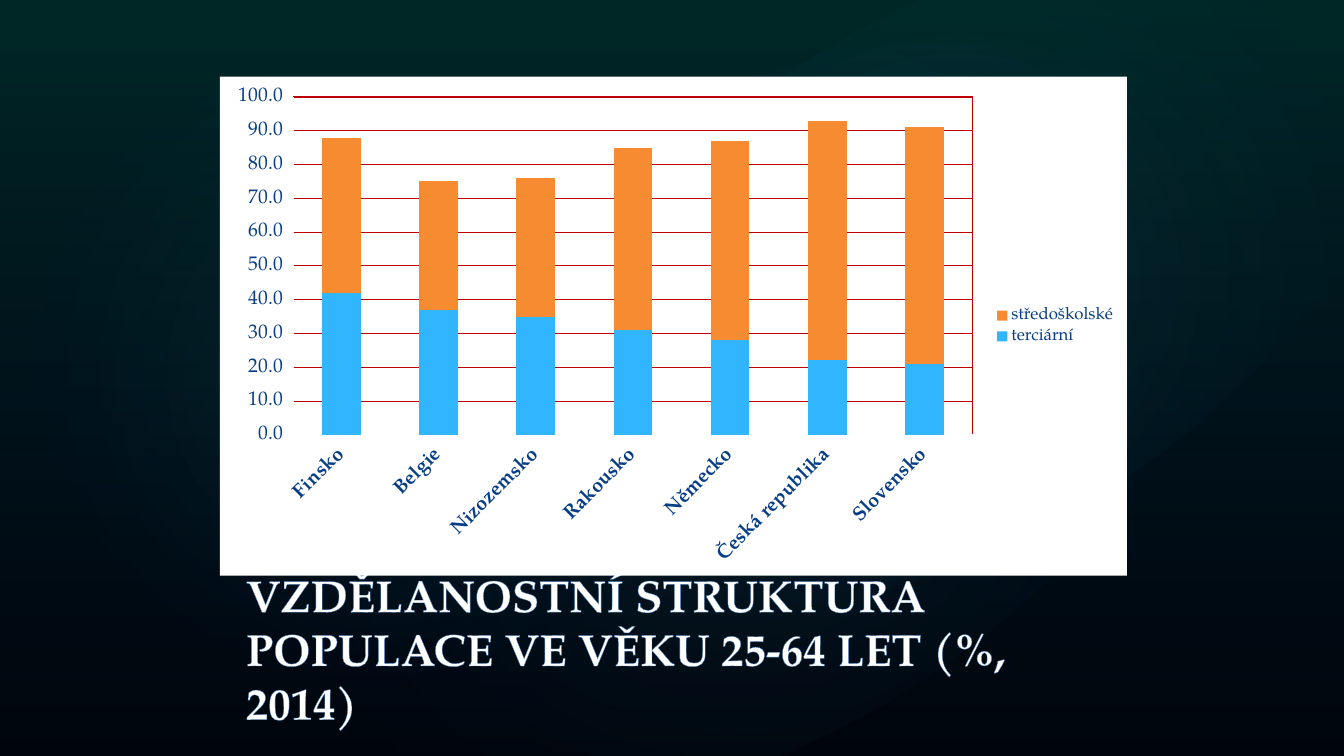
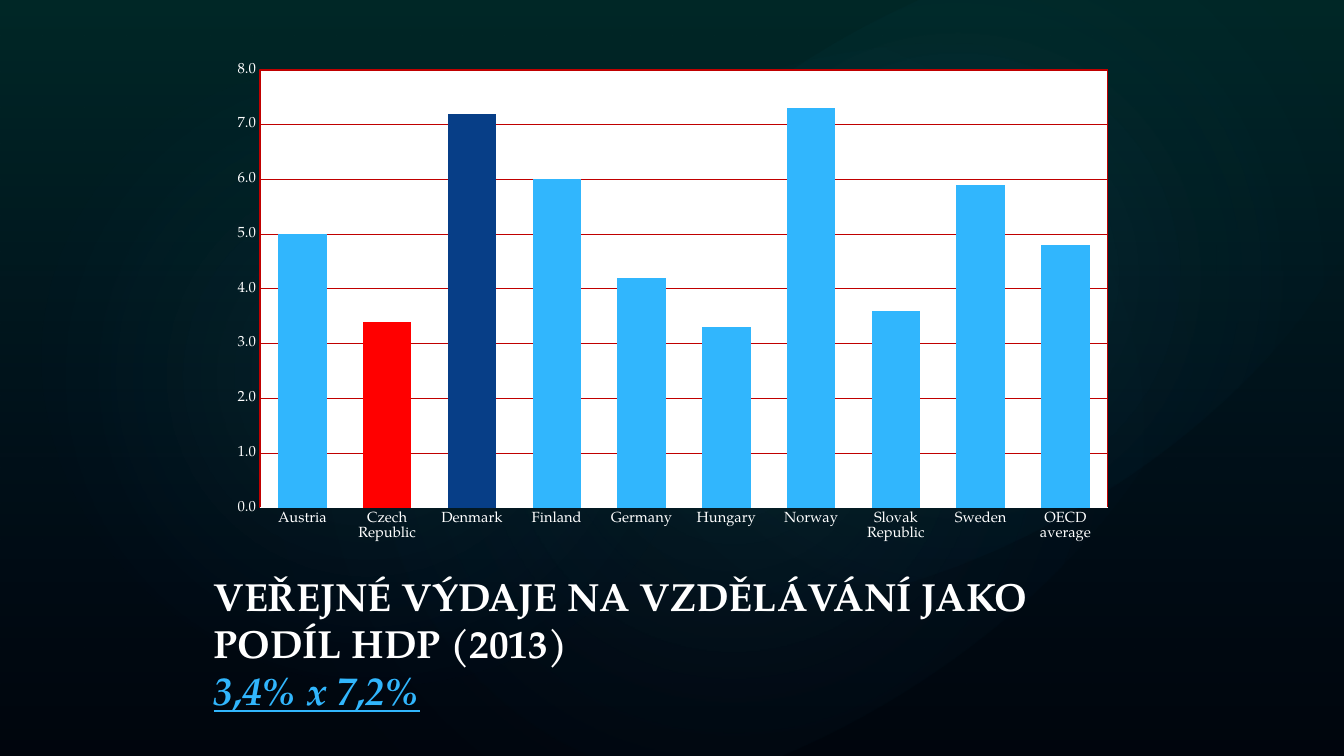
"""Build two dark slides about education, each a column chart above a title."""
from pptx import Presentation
from pptx.chart.data import CategoryChartData
from pptx.dml.color import RGBColor
from pptx.enum import chart as kinds, shapes, text
from pptx.oxml import parse_xml
from pptx.oxml.ns import nsdecls, qn
from pptx.util import Pt

FONT = "TeX Gyre Pagella"
COLORS = {
    "black": "000000", "white": "FFFFFF", "teal": "03706E", "navy": "073E87",
    "aqua": "5AFBF8", "sky": "31B6FD", "orange": "F68B32", "red": "FF0000",
    "grid": "C00000", "edge": "467AB8",
}
SLIDE_SIZE = (960, 540)

BACKDROP = [
    {"kind": "RECTANGLE", "box": (0, 0, *SLIDE_SIZE), "turn": 0,
     "stops": [(0, "teal", 36), (100, "navy", 10)]},
    {"kind": "OVAL", "box": (144, 82, 760, 449), "turn": 328.7,
     "stops": [(0, "aqua", 7), (58, "navy", 0)]},
    {"kind": "OVAL", "box": (44, 33, 436, 470), "turn": 294.3,
     "stops": [(0, "aqua", 8), (58, "navy", 0)]},
    {"kind": "OVAL", "box": (344, 9.5, 680, 374), "turn": 328.7,
     "stops": [(0, "aqua", 8), (58, "navy", 0)]},
]

PAGES = [
    {
        "title": {
            "box": (168.5, 434, 635, 90), "size": 32, "outline": 0.83,
            "lines": [("VZDĚLANOSTNÍ STRUKTURA POPULACE VE VĚKU 25-64 LET (%, 2014)",
                       {"color": "white"})],
        },
        "chart": {
            "kind": "COLUMN_STACKED", "box": (157, 54.7, 648, 356.4),
            "plot": (209.3, 69.3, 485.7, 241.4), "fill": "white",
            "categories": ["Finsko", "Belgie", "Nizozemsko", "Rakousko", "Německo",
                           "Česká republika", "Slovensko"],
            "series": [("terciární", [42, 37, 35, 31, 28, 22, 21], "sky"),
                       ("středoškolské", [46, 38, 41, 54, 59, 71, 70], "orange")],
            "points": {}, "gap": 150, "overlap": 100, "top": 100, "step": 10,
            "tick": "OUTSIDE", "value_line": True, "label_turn": -45,
            "value_font": {"size": 14, "color": "navy"},
            "category_font": {"size": 14, "color": "navy", "bold": True},
            "legend_font": {"size": 12, "color": "navy"},
        },
    },
    {
        "title": {
            "box": (145.5, 412, 669, 101), "size": 28, "outline": 0,
            "lines": [("VEŘEJNÉ VÝDAJE NA VZDĚLÁVÁNÍ JAKO PODÍL HDP (2013)",
                       {"color": "white"}),
                      ("3,4% x 7,2%",
                       {"color": "sky", "italic": True, "underline": True})],
        },
        "chart": {
            "kind": "COLUMN_CLUSTERED", "box": (157, 37.4, 648, 356.4),
            "plot": (185.7, 50, 605.7, 312.9), "fill": None,
            "categories": ["Austria", "Czech Republic", "Denmark", "Finland", "Germany",
                           "Hungary", "Norway", "Slovak Republic", "Sweden",
                           "OECD average"],
            "series": [("Series 1", [5, 3.4, 7.2, 6, 4.2, 3.3, 7.3, 3.6, 5.9, 4.8], "sky")],
            "points": {1: "red", 2: "navy"}, "gap": 75, "overlap": -25,
            "top": 8, "step": 1, "tick": "NONE", "value_line": False, "label_turn": 0,
            "value_font": {"size": 10.5, "color": "white"},
            "category_font": {"size": 10.5, "color": "white"},
            "legend_font": None,
        },
    },
]


def rgb(name):
    return RGBColor.from_string(COLORS[name])


def points(box):
    return [Pt(length) for length in box]


def paint(fill, name):
    fill.solid()
    fill.fore_color.rgb = rgb(name)


def style(font, size, color, **formats):
    values = {"name": FONT, "size": Pt(size), **formats}
    for key, value in values.items():
        setattr(font, key, value)
    font.color.rgb = rgb(color)


def solid_xml(name):
    return f'<a:solidFill><a:srgbClr val="{COLORS[name]}"/></a:solidFill>'


def gradient(stops, round_fill):
    marks = "".join(
        f'<a:gs pos="{place * 1000}"><a:srgbClr val="{COLORS[name]}">'
        f'<a:alpha val="{alpha * 1000}"/></a:srgbClr></a:gs>'
        for place, name, alpha in stops)
    course = ('<a:path path="circle"><a:fillToRect l="50000" t="50000" r="50000" '
              'b="50000"/></a:path>' if round_fill else '<a:lin ang="5400000" scaled="0"/>')
    return parse_xml(f'<a:gradFill {nsdecls("a")} rotWithShape="1">'
                     f'<a:gsLst>{marks}</a:gsLst>{course}</a:gradFill>')


def add_backdrop(master, page):
    paint(master.background.fill, "black")
    for part in BACKDROP:
        kind = getattr(shapes.MSO_SHAPE, part["kind"])
        shape = page.shapes.add_shape(kind, *points(part["box"]))
        shape.rotation = part["turn"]
        shape.element.spPr.insert(2, gradient(part["stops"], part["kind"] == "OVAL"))
        shape.line.fill.background()
        shape.shadow.inherit = False
        master.shapes.element.append(shape.element)


def add_title(page, title):
    frame = page.shapes.add_textbox(*points(title["box"])).text_frame
    frame.word_wrap = True
    frame.vertical_anchor = text.MSO_ANCHOR.BOTTOM
    para = frame.paragraphs[0]
    for index, (words, formats) in enumerate(title["lines"]):
        if index:
            para.add_line_break()
        span = para.add_run()
        span.text = words
        style(span.font, title["size"], bold=True, **formats)
        if title["outline"]:
            span.font._element.insert(0, parse_xml(
                f'<a:ln {nsdecls("a")} w="{Pt(title["outline"])}">{solid_xml("edge")}</a:ln>'))


def frame_chart(chart, spec):
    left, top, width, height = spec["box"]
    x, y, wide, high = spec["plot"]
    shares = {"x": (x - left) / width, "y": (y - top) / height,
              "w": wide / width, "h": high / height}
    places = "".join(f'<c:{key} val="{share:.4f}"/>' for key, share in shares.items())
    area = chart.element.find(".//" + qn("c:plotArea"))
    for old in area.findall(qn("c:layout")):
        area.remove(old)
    area.insert(0, parse_xml(
        f'<c:layout {nsdecls("c")}><c:manualLayout><c:layoutTarget val="inner"/>'
        f'<c:xMode val="edge"/><c:yMode val="edge"/>{places}</c:manualLayout></c:layout>'))
    area.append(parse_xml(
        f'<c:spPr {nsdecls("c", "a")}>{solid_xml("white")}'
        f'<a:ln w="{Pt(0.75)}">{solid_xml("grid")}</a:ln></c:spPr>'))
    back = solid_xml(spec["fill"]) if spec["fill"] else "<a:noFill/>"
    chart.element.find(qn("c:chart")).addnext(parse_xml(
        f'<c:spPr {nsdecls("c", "a")}>{back}<a:ln><a:noFill/></a:ln></c:spPr>'))


def style_axes(chart, spec):
    category, value = chart.category_axis, chart.value_axis
    for axis, key in ((category, "category_font"), (value, "value_font")):
        axis.major_tick_mark = getattr(kinds.XL_TICK_MARK, spec["tick"])
        axis.minor_tick_mark = kinds.XL_TICK_MARK.NONE
        style(axis.tick_labels.font, **spec[key])
        paint(axis.format.line.fill, "white")
        axis.format.line.width = Pt(0.75)
    if not spec["value_line"]:
        value.format.line.fill.background()
    if spec["label_turn"]:
        body = category._element.find(qn("c:txPr")).find(qn("a:bodyPr"))
        body.set("rot", str(spec["label_turn"] * 60000))
        body.set("vert", "horz")
    scale = {"minimum_scale": 0, "maximum_scale": spec["top"],
             "major_unit": spec["step"], "has_major_gridlines": True}
    for key, setting in scale.items():
        setattr(value, key, setting)
    value.tick_labels.number_format = "0.0"
    value.tick_labels.number_format_is_linked = False
    paint(value.major_gridlines.format.line.fill, "grid")
    value.major_gridlines.format.line.width = Pt(0.75)


def add_column_chart(page, spec):
    data = CategoryChartData()
    data.categories = spec["categories"]
    for name, values, _ in spec["series"]:
        data.add_series(name, values)
    kind = getattr(kinds.XL_CHART_TYPE, spec["kind"])
    chart = page.shapes.add_chart(kind, *points(spec["box"]), data).chart
    style(chart.font, 10, "white")
    chart.has_title = False
    plot = chart.plots[0]
    plot.vary_by_categories = False
    plot.gap_width, plot.overlap = spec["gap"], spec["overlap"]
    for series, (_, _, color) in zip(plot.series, spec["series"]):
        series.invert_if_negative = False
        paint(series.format.fill, color)
        for index, accent in spec["points"].items():
            paint(series.points[index].format.fill, accent)
    style_axes(chart, spec)
    chart.has_legend = spec["legend_font"] is not None
    if chart.has_legend:
        chart.legend.position = kinds.XL_LEGEND_POSITION.RIGHT
        chart.legend.include_in_layout = False
        style(chart.legend.font, **spec["legend_font"])
    frame_chart(chart, spec)


def main():
    deck = Presentation()
    deck.slide_width, deck.slide_height = points(SLIDE_SIZE)
    for index, content in enumerate(PAGES):
        page = deck.slides.add_slide(deck.slide_layouts[6])
        if index == 0:
            add_backdrop(deck.slide_master, page)
        add_title(page, content["title"])
        add_column_chart(page, content["chart"])
    deck.save("out.pptx")


if __name__ == "__main__":
    main()
